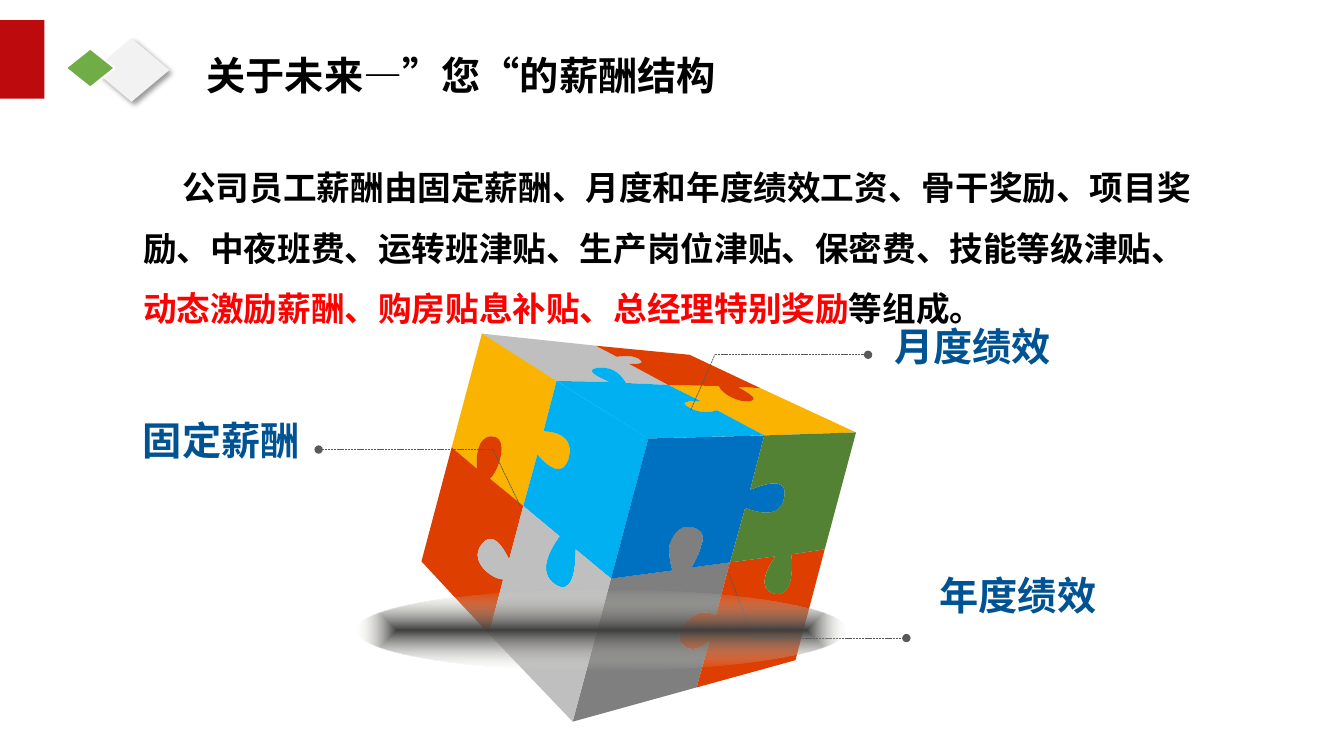
from pptx import Presentation
from pptx.dml.color import RGBColor as RGB
from pptx.enum.dml import MSO_LINE as Dash
from pptx.enum.shapes import MSO_CONNECTOR as Conn, MSO_SHAPE as Kind
from pptx.enum.text import MSO_ANCHOR as Anchor, MSO_AUTO_SIZE as Auto, PP_ALIGN as Align
from pptx.oxml import parse_xml
from pptx.oxml.ns import nsdecls, qn
from pptx.util import Inches, Pt

BLACK, WHITE, RED = RGB(0, 0, 0), RGB(255, 255, 255), RGB(255, 0, 0)
CRIMSON, LEAF, PALE = RGB(0xBD, 0x0A, 0x0D), RGB(0x70, 0xAD, 0x47), RGB(0xF2, 0xF2, 0xF2)
NAVY, SLATE = RGB(0x00, 0x53, 0x92), RGB(0x59, 0x59, 0x59)
GRAY, SILVER, SKY = RGB(0x7F, 0x7F, 0x7F), RGB(0xBF, 0xBF, 0xBF), RGB(0x63, 0xCF, 0xF6)
GOLD, RUST, CYAN = RGB(0xFA, 0xB3, 0x00), RGB(0xDE, 0x3F, 0x00), RGB(0x00, 0xB0, 0xF0)
BLUE, GREEN = RGB(0x00, 0x70, 0xC0), RGB(0x54, 0x82, 0x35)
SANS = "Noto Sans CJK SC"

TITLE = "关于未来—”您“的薪酬结构"
BODY = [
    ("公司员工薪酬由固定薪酬、月度和年度绩效工资、骨干奖励、项目奖励、中夜班费、"
     "运转班津贴、生产岗位津贴、保密费、技能等级津贴、 ", BLACK),
    ("动态激励薪酬、购房贴息补贴、总经理特别奖励", RED),
    ("等组成。", BLACK),
]
LABELS = [
    ("月度绩效", (8.87, 3.2, 1.92, 0.47), Align.LEFT),
    ("固定薪酬", (1.16, 4.13, 1.81, 0.47), Align.RIGHT),
    ("年度绩效", (9.32, 5.67, 1.81, 0.47), Align.LEFT),
]
LEADERS = [
    ((5.16, 5.02), (4.89, 4.46), (3.16, 4.46)),
    ((6.85, 4.07), (7.09, 3.52), (8.61, 3.52)),
    ((7.23, 5.69), (7.47, 6.33), (8.99, 6.33)),
]
CORNERS = {
    "A": (4.78, 3.31), "B": (5.52, 3.78), "C": (6.43, 4.35), "D": (4.48, 4.44),
    "E": (5.19, 5.02), "F": (6.06, 5.74), "G": (4.18, 5.57), "H": (4.85, 6.29),
    "I": (5.68, 7.16), "J": (7.58, 4.32), "K": (8.49, 4.29), "L": (7.24, 5.58),
    "M": (8.18, 5.45), "N": (6.91, 6.82), "O": (7.89, 6.55), "P": (5.91, 3.43),
    "Q": (6.84, 3.52), "R": (6.63, 3.82), "S": (7.54, 3.85),
}
KNOBS = {
    "BE": [(5.39, 4.28), (5.49, 4.28, 5.7, 4.31, 5.64, 4.55), (5.58, 4.75, 5.42, 4.62, 5.33, 4.51)],
    "DE": [(4.73, 4.65), (4.72, 4.55, 4.73, 4.32, 4.88, 4.33), (5.05, 4.33, 4.96, 4.66, 4.86, 4.75)],
    "EF": [(5.55, 5.32), (5.48, 5.42, 5.31, 5.67, 5.51, 5.8), (5.68, 5.91, 5.71, 5.64, 5.71, 5.45)],
    "EH": [(5.05, 5.55), (5, 5.45, 4.89, 5.24, 4.77, 5.41), (4.65, 5.58, 4.89, 5.75, 4.99, 5.75)],
    "JL": [(7.44, 4.86), (7.56, 4.81, 7.81, 4.72, 7.78, 4.92), (7.75, 5.16, 7.51, 5.08, 7.39, 5.04)],
    "FL": [(6.67, 5.66), (6.65, 5.61, 6.63, 5.49, 6.64, 5.41), (6.66, 5.34, 6.72, 5.2, 6.86, 5.23),
           (7, 5.26, 6.98, 5.35, 6.95, 5.43), (6.94, 5.49, 6.88, 5.59, 6.86, 5.63)],
    "LM": [(7.69, 5.52), (7.61, 5.63, 7.5, 5.85, 7.68, 5.89), (7.87, 5.93, 7.86, 5.64, 7.85, 5.5)],
    "LN": [(7.1, 6.11), (7.06, 6.08, 6.92, 6.02, 6.78, 6.2), (6.64, 6.39, 6.87, 6.54, 7.04, 6.35)],
    "PR": [(6.12, 3.54), (6.17, 3.53, 6.31, 3.52, 6.36, 3.58), (6.39, 3.61, 6.31, 3.61, 6.24, 3.61)],
    "BR": [(6.05, 3.79), (5.95, 3.75, 5.78, 3.67, 5.93, 3.65), (6.1, 3.63, 6.17, 3.74, 6.21, 3.8)],
    "RS": [(7.13, 3.83), (7.16, 3.91, 7.33, 4, 7.44, 3.98), (7.54, 3.96, 7.41, 3.89, 7.32, 3.84)],
    "RJ": [(6.95, 3.98), (6.86, 3.98, 6.72, 3.98, 6.83, 4.04), (6.95, 4.11, 7.05, 4.09, 7.11, 4.07)],
}
PIECES = [
    ("FLNI", GRAY), ("AB", SKY), ("BC", SKY), ("RSKJ", GOLD), ("APRB", SILVER),
    ("PQSR", RUST), ("BRJC", CYAN), ("AB", SKY), ("ABED", GOLD), ("BCFE", CYAN),
    ("CJLF", BLUE), ("LMON", RUST), ("JKML", GREEN), ("DEHG", RUST), ("EFIH", SILVER),
]
GLOW = f"""<a:gradFill {nsdecls("a")} rotWithShape="1"><a:gsLst>
<a:gs pos="0"><a:srgbClr val="404040"/></a:gs>
<a:gs pos="100000"><a:srgbClr val="EEECE1"><a:alpha val="0"/></a:srgbClr></a:gs></a:gsLst>
<a:path path="shape"><a:fillToRect l="50000" t="50000" r="50000" b="50000"/></a:path></a:gradFill>"""
SHADE = f"""<a:effectLst {nsdecls("a")}>
<a:outerShdw blurRad="50800" dist="38100" dir="2700000" algn="tl" rotWithShape="0">
<a:srgbClr val="000000"><a:alpha val="40000"/></a:srgbClr></a:outerShdw></a:effectLst>"""
NONE = f'<a:effectLst {nsdecls("a")}/>'
OVAL = f'<a:tailEnd {nsdecls("a")} type="oval"/>'

deck = Presentation()
deck.slide_width, deck.slide_height = Inches(13.33), Inches(7.5)
slide = deck.slides.add_slide(deck.slide_layouts[5])
shapes = slide.shapes


def trace(a, b):
    """Return the line and curve steps of one cube edge from a to b."""
    if b + a not in KNOBS:
        return KNOBS.get(a + b, []) + [CORNERS[b]]
    steps = KNOBS[b + a] + [CORNERS[a]]
    nodes = [CORNERS[b]] + [step[-2:] for step in steps]
    return [step[2:4] + step[:2] + node if len(step) == 6 else node
            for step, node in zip(steps[::-1], nodes[-2::-1])]


def paint(shape, fill):
    """Give a shape a flat fill with no line or shadow."""
    shape.shadow.inherit = False
    shape.fill.solid()
    shape.fill.fore_color.rgb = fill
    shape.line.fill.background()


def mold(names, color):
    """Add one puzzle piece bounded by the named corners."""
    steps = [s for a, b in zip(names, names[1:] + names[0]) for s in trace(a, b)]
    build = shapes.build_freeform(*map(Inches, CORNERS[names[0]]), scale=1)
    build.add_line_segments([tuple(map(Inches, s[-2:])) for s in steps], close=True)
    piece = build.convert_to_shape()
    for line, step in zip(list(piece._element.iter(qn("a:lnTo"))), steps):
        if len(step) == 6:
            dots = "".join(f'<a:pt x="{Inches(x) - piece.left}" y="{Inches(y) - piece.top}"/>'
                           for x, y in zip(step[::2], step[1::2]))
            curve = parse_xml(f'<a:cubicBezTo {nsdecls("a")}>{dots}</a:cubicBezTo>')
            line.getparent().replace(line, curve)
    paint(piece, color)


def add(kind, box, fill):
    """Add a flat preset shape."""
    shape = shapes.add_shape(kind, *map(Inches, box))
    paint(shape, fill)
    return shape


def style(run, size, color, face):
    """Format a bold run for Latin and Chinese text."""
    font = run.font
    font.size, font.bold, font.name = Pt(size), True, face
    font.color.rgb = color
    east = parse_xml(f'<a:ea {nsdecls("a")} typeface="{SANS}"/>')
    run._r.get_or_add_rPr().find(qn("a:latin")).addnext(east)


def link(start, end, dot):
    """Add one dashed part of a leader."""
    line = shapes.add_connector(Conn.STRAIGHT, *map(Inches, start + end))
    line.line.color.rgb, line.line.width = SLATE, Pt(0.5)
    line.line.dash_style = Dash.SQUARE_DOT
    if dot:
        line.line._get_or_add_ln().append(parse_xml(OVAL))
    line._element.spPr.append(parse_xml(NONE))


add(Kind.RECTANGLE, (0, 0.2, 0.44, 0.78), CRIMSON)
for names, color in PIECES:
    mold(names, color)

for root, bend, tip in LEADERS:
    link(root, bend, False)
    link(bend, tip, True)

for text, box, side in LABELS:
    frame = shapes.add_textbox(*map(Inches, box)).text_frame
    frame.margin_left = frame.margin_right = frame.margin_top = frame.margin_bottom = 0
    frame.word_wrap = True
    frame.text = text
    frame.paragraphs[0].alignment = side
    style(frame.paragraphs[0].runs[0], 28, NAVY, "Arial")

glow = add(Kind.OVAL, (3.54, 5.85, 4.86, 0.8), GRAY)
props = glow._element.spPr
props.replace(props.find(qn("a:solidFill")), parse_xml(GLOW))
tile = add(Kind.DIAMOND, (0.93, 0.38, 0.75, 0.63), PALE)
props = tile._element.spPr
props.replace(props.find(qn("a:effectLst")), parse_xml(SHADE))
gem = add(Kind.DIAMOND, (0.65, 0.48, 0.49, 0.39), LEAF)
gem.line.color.rgb, gem.line.width = WHITE, Pt(1.5)

title = shapes.title
title.left, title.top, title.width, title.height = map(Inches, (1.95, 0.23, 5.7, 0.81))
frame = title.text_frame
frame.text = TITLE
frame.auto_size, frame.vertical_anchor = Auto.NONE, Anchor.TOP
para = frame.paragraphs[0]
para.alignment, para.line_spacing = Align.LEFT, 1.5
style(para.runs[0], 28, BLACK, SANS)

frame = shapes.add_textbox(*map(Inches, (1.32, 1.41, 10.62, 1.92))).text_frame
frame.word_wrap = True
para = frame.paragraphs[0]
para.line_spacing = 1.5
para._p.get_or_add_pPr().set("indent", str(Inches(0.39)))
for text, color in BODY:
    run = para.add_run()
    run.text = text
    style(run, 24, color, SANS)

deck.save("out.pptx")
